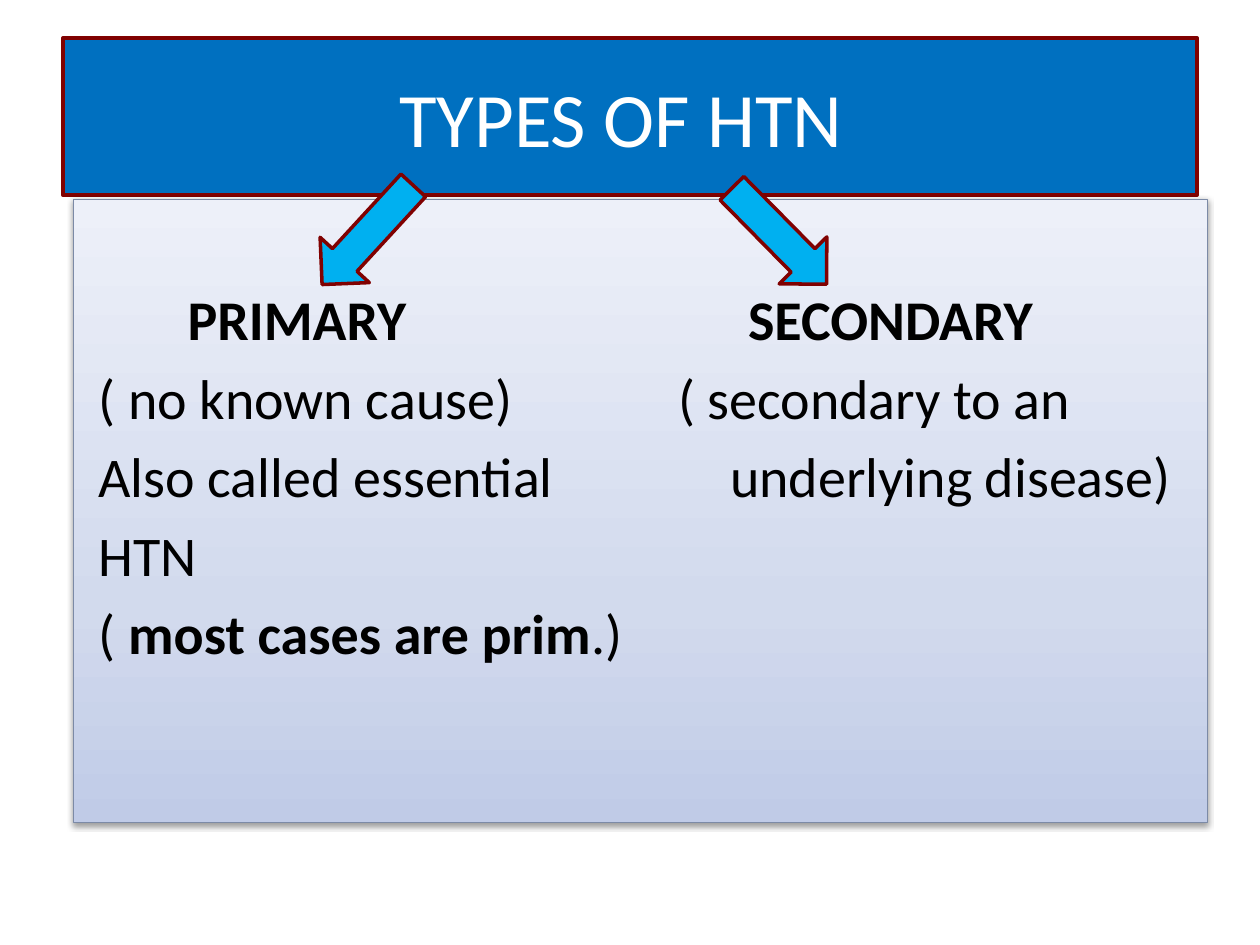
"""Build a slide that contrasts primary and secondary HTN."""
from pptx import Presentation
from pptx.dml.color import RGBColor
from pptx.enum.shapes import MSO_SHAPE
from pptx.enum.text import MSO_ANCHOR, PP_ALIGN
from pptx.oxml import parse_xml
from pptx.oxml.ns import nsdecls, qn
from pptx.util import Pt

TITLE = "TYPES OF HTN"
PRIMARY_LINES = [
    (58.1, [("PRIMARY", True)]),
    (7.2, [("( no known cause)", False)]),
    (7.2, [("Also called essential", False)]),
    (7.2, [("HTN", False)]),
    (7.2, [("( ", False), ("most cases are prim", True), (".)", False)]),
]
SECONDARY_LINES = [
    (40, [("SECONDARY", True)]),
    (0, [("( secondary to an", False)]),
    (29.7, [("underlying disease)", False)]),
]
ARROWS = [(191, 95.8, 42.6), (426.2, 96.5, 315.4)]
ARROW_SIZE = (38.2, 77)
TITLE_BOX = (36, 21.6, 648, 90)
TYPES_BOX = (42, 113.8, 648, 356.4)
SECONDARY_BOX = (380.4, 113.8, 309.6, 200)
TYPES_TOP_INSET = 49

FONT = "Calibri"
WHITE = RGBColor(0xFF, 0xFF, 0xFF)
BLACK = RGBColor(0x00, 0x00, 0x00)
BLUE = RGBColor(0x00, 0x70, 0xC0)
SKY = RGBColor(0x00, 0xB0, 0xF0)
MAROON = RGBColor(0x80, 0x01, 0x01)
SLATE = RGBColor(0x7C, 0x8A, 0xA6)
GRADIENT = [
    (0, RGBColor(0xC0, 0xCB, 0xE7)),
    (35, RGBColor(0xD2, 0xDA, 0xED)),
    (100, RGBColor(0xED, 0xF0, 0xF9)),
]


def add_outlined(slide, preset, box, outline, width, fill=None):
    shape = slide.shapes.add_shape(preset, *map(Pt, box))
    shape.shadow.inherit = False
    shape.line.color.rgb = outline
    shape.line.width = Pt(width)
    if fill is not None:
        shape.fill.solid()
        shape.fill.fore_color.rgb = fill
    return shape


def format_run(run, size, color, bold=False):
    run.font.name = FONT
    run.font.size = Pt(size)
    run.font.color.rgb = color
    run.font.bold = bold


def shade(panel):
    stops = "".join(
        f'<a:gs pos="{pos * 1000}"><a:srgbClr val="{color}"/></a:gs>'
        for pos, color in GRADIENT
    )
    properties = panel._element.spPr
    properties.find(qn("a:prstGeom")).addnext(parse_xml(
        f'<a:gradFill {nsdecls("a")} rotWithShape="1"><a:gsLst>{stops}</a:gsLst>'
        '<a:lin ang="16200000" scaled="0"/></a:gradFill>'
    ))
    properties.find(qn("a:effectLst")).append(parse_xml(
        f'<a:outerShdw {nsdecls("a")} blurRad="{Pt(3.1)}" dist="{Pt(1.6)}" '
        'dir="5400000" rotWithShape="0"><a:srgbClr val="000000">'
        '<a:alpha val="38000"/></a:srgbClr></a:outerShdw>'
    ))


def add_title(slide):
    banner = add_outlined(slide, MSO_SHAPE.RECTANGLE, TITLE_BOX, MAROON, 2, BLUE)
    frame = banner.text_frame
    frame.text = TITLE
    frame.vertical_anchor = MSO_ANCHOR.MIDDLE
    frame.margin_right = Pt(17)
    heading = frame.paragraphs[0]
    heading.alignment = PP_ALIGN.CENTER
    format_run(heading.runs[0], 44, WHITE)


def write_lines(frame, lines):
    frame.word_wrap = True
    frame.vertical_anchor = MSO_ANCHOR.TOP
    frame.margin_top = Pt(TYPES_TOP_INSET)
    for index, (indent, parts) in enumerate(lines):
        line = frame.add_paragraph() if index else frame.paragraphs[0]
        line.alignment = PP_ALIGN.LEFT
        line.space_before = Pt(6.4 if index else 0)
        line._p.get_or_add_pPr().set("marL", str(Pt(indent)))
        for words, bold in parts:
            run = line.add_run()
            run.text = words
            format_run(run, 32, BLACK, bold)


def main():
    deck = Presentation()
    deck.slide_width, deck.slide_height = Pt(720), Pt(540)
    slide = deck.slides.add_slide(deck.slide_layouts[6])
    add_title(slide)
    panel = add_outlined(slide, MSO_SHAPE.RECTANGLE, TYPES_BOX, SLATE, 0.75)
    shade(panel)
    write_lines(panel.text_frame, PRIMARY_LINES)
    secondary = slide.shapes.add_textbox(*map(Pt, SECONDARY_BOX))
    write_lines(secondary.text_frame, SECONDARY_LINES)
    for left, top, angle in ARROWS:
        box = (left, top, *ARROW_SIZE)
        arrow = add_outlined(slide, MSO_SHAPE.DOWN_ARROW, box, MAROON, 2, SKY)
        arrow.rotation = angle
    deck.save("out.pptx")


if __name__ == "__main__":
    main()
